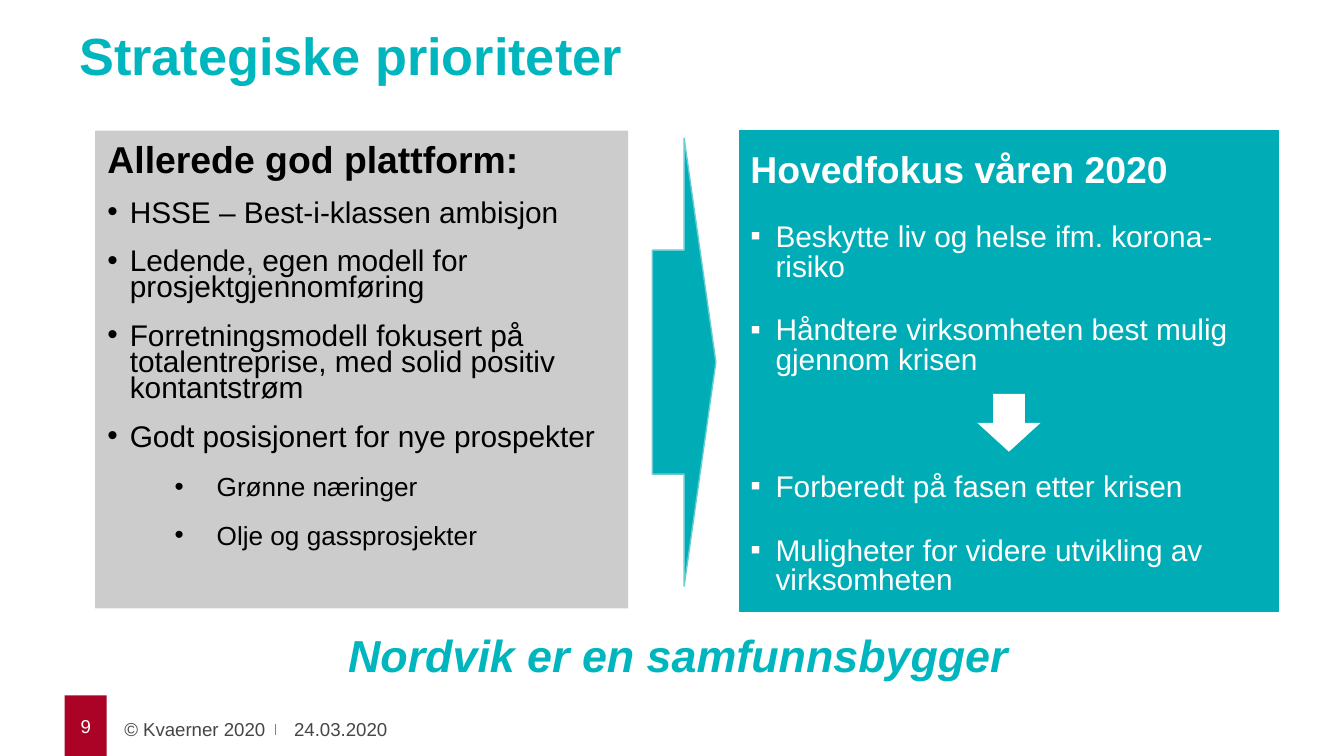
from lxml import etree
from pptx import Presentation
from pptx.dml.color import RGBColor
from pptx.enum import shapes, text
from pptx.oxml.ns import qn
from pptx.util import Pt

TEAL = RGBColor(0x00, 0xB6, 0xBE)
DEEP_TEAL = RGBColor(0x00, 0xAC, 0xB6)
PALE_TEAL = RGBColor(0x66, 0xCD, 0xD3)
RED = RGBColor(0xAB, 0x03, 0x25)
GREY = RGBColor(0xCC, 0xCC, 0xCC)
DARK_GREY = RGBColor(0x46, 0x46, 0x46)
BLACK = RGBColor(0, 0, 0)
WHITE = RGBColor(0xFF, 0xFF, 0xFF)

SHAPE = shapes.MSO_SHAPE
ANCHOR = text.MSO_ANCHOR
ALIGN = text.PP_ALIGN


def add_block(slide, kind, box, fill, line=None):
    block = slide.shapes.add_shape(kind, *map(Pt, box))
    block.shadow.inherit = False
    block.fill.solid()
    block.fill.fore_color.rgb = fill
    if line is None:
        block.line.fill.background()
    else:
        block.line.color.rgb = line
        block.line.width = Pt(0.75)
    return block


def set_frame(frame, anchor=ANCHOR.TOP, left=0, top=0, bottom=0):
    values = {
        "word_wrap": True, "vertical_anchor": anchor,
        "margin_left": Pt(left), "margin_right": 0,
        "margin_top": Pt(top), "margin_bottom": Pt(bottom),
    }
    for name, value in values.items():
        setattr(frame, name, value)


def write(paragraph, words, size, color, bold=False, italic=False, **layout):
    for name, value in layout.items():
        setattr(paragraph, name, value)
    run = paragraph.add_run()
    run.text = words
    run.font.color.rgb = color
    values = {"name": "Arial", "size": Pt(size), "bold": bold, "italic": italic}
    for name, value in values.items():
        setattr(run.font, name, value)


def add_label(slide, box, words, size, color, anchor=ANCHOR.BOTTOM, left=0,
              **style):
    frame = slide.shapes.add_textbox(*map(Pt, box)).text_frame
    set_frame(frame, anchor, left)
    write(frame.paragraphs[0], words, size, color, **style)


def set_bullet(paragraph, mark, left, hanging):
    props = paragraph._p.get_or_add_pPr()
    props.set("marL", str(Pt(left)))
    props.set("indent", str(-Pt(hanging)))
    etree.SubElement(props, qn("a:buFont")).set("typeface", "Arial")
    etree.SubElement(props, qn("a:buChar")).set("char", mark)


def add_list(slide, box, heading, heading_layout, items, color, mark, leading,
             after):
    """Items are (words, size, left indent, hanging, space before)."""
    frame = slide.shapes.add_textbox(*map(Pt, box)).text_frame
    set_frame(frame, top=3, bottom=3)
    write(frame.paragraphs[0], heading, 20, color, bold=True, **heading_layout)
    for words, size, left, hanging, before in items:
        paragraph = frame.add_paragraph()
        set_bullet(paragraph, mark, left, hanging)
        write(paragraph, words, size, color, line_spacing=Pt(leading),
              space_before=Pt(before), space_after=Pt(after))


def add_divider(slide, x, top, bottom):
    divider = slide.shapes.add_connector(
        shapes.MSO_CONNECTOR.STRAIGHT, Pt(x), Pt(top), Pt(x), Pt(bottom))
    divider.line.color.rgb = TEAL
    divider.line.width = Pt(0.75)
    etree.SubElement(divider._element.spPr, qn("a:effectLst"))


def add_footer(slide):
    add_label(slide, (58, 381, 84, 19), "© Kvaerner 2020", 10, DARK_GREY,
              ANCHOR.TOP, alignment=ALIGN.RIGHT)
    slide.shapes[-1].text_frame.margin_top = Pt(3.6)
    add_divider(slide, 147.5, 388, 394)
    add_label(slide, (150.5, 388, 68, 8.8), "24.03.2020", 10, DARK_GREY, left=7.2)
    number = add_block(slide, SHAPE.RECTANGLE, (34.7, 372.5, 22.5, 32.5), RED)
    set_frame(number.text_frame, ANCHOR.MIDDLE)
    write(number.text_frame.paragraphs[0], "9", 10, WHITE, alignment=ALIGN.CENTER)


def add_platform(slide):
    add_block(slide, SHAPE.RECTANGLE, (51, 70, 285.5, 256), GREY)
    main_points = [
        "HSSE – Best-i-klassen ambisjon",
        "Ledende, egen modell for prosjektgjennomføring",
        "Forretningsmodell fokusert på totalentreprise, med solid positiv kontantstrøm",
        "Godt posisjonert for nye prospekter",
    ]
    sub_points = ["Grønne næringer", "Olje og gassprosjekter"]
    items = [(words, 16, 12, 12, 6) for words in main_points]
    items += [(words, 14, 58.5, 22.5, 6) for words in sub_points]
    add_list(slide, (57.6, 77.8, 278.6, 245), "Allerede god plattform:",
             {"line_spacing": Pt(16), "space_after": Pt(6)},
             items, BLACK, "•", 14, 6)


def add_focus(slide):
    add_block(slide, SHAPE.RECTANGLE, (396, 70, 289, 257.5), DEEP_TEAL, DEEP_TEAL)
    # The wider gap before the third point leaves room for the arrow
    points = [
        ("Beskytte liv og helse ifm. korona-risiko", 17.5),
        ("Håndtere virksomheten best mulig gjennom krisen", 6),
        ("Forberedt på fasen etter krisen", 40),
        ("Muligheter for videre utvikling av virksomheten", 6),
    ]
    items = [(words, 16, 13.5, 13.5, before) for words, before in points]
    add_list(slide, (402, 77.8, 283, 245), "Hovedfokus våren 2020",
             {"line_spacing": 0.9}, items, WHITE, "▪", 16, 12)
    add_block(slide, SHAPE.DOWN_ARROW, (523.5, 211, 34, 31), WHITE)


def main():
    deck = Presentation()
    deck.slide_width, deck.slide_height = Pt(720), Pt(405)
    slide = deck.slides.add_slide(deck.slide_layouts[6])

    # Title
    add_label(slide, (42.5, 11, 635, 35), "Strategiske prioriteter", 28, TEAL,
              bold=True)

    # Two panels with the arrow between them
    add_platform(slide)
    add_block(slide, SHAPE.RIGHT_ARROW, (349.5, 74, 34, 240), DEEP_TEAL, PALE_TEAL)
    add_focus(slide)

    # Closing line and footer
    add_label(slide, (186.5, 330, 530, 35), "Nordvik er en samfunnsbygger", 24,
              TEAL, bold=True, italic=True)
    add_footer(slide)

    deck.save("out.pptx")


if __name__ == "__main__":
    main()
